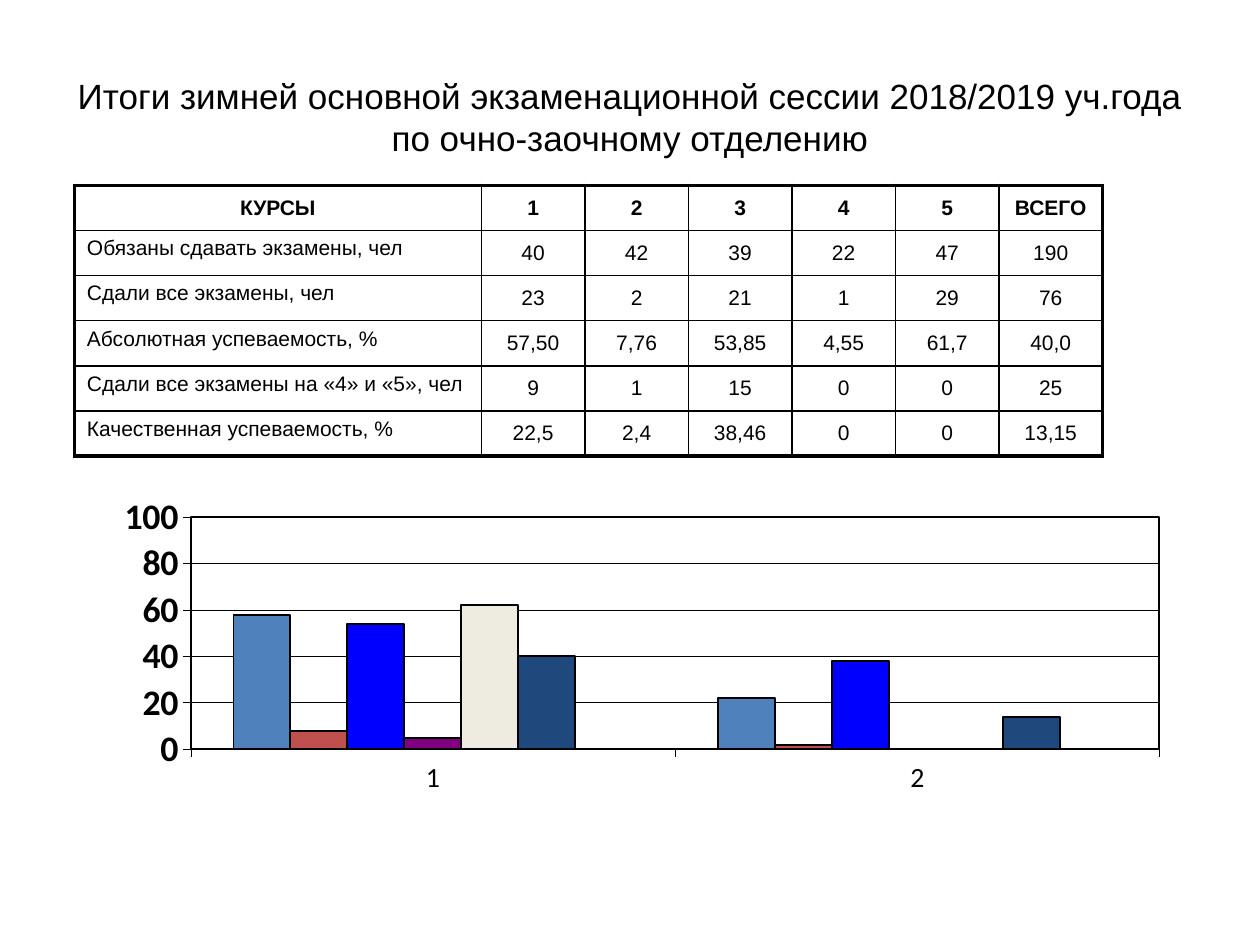
from lxml import etree
from pptx import Presentation, util as u
from pptx.chart import data as chart_data
from pptx.dml.color import RGBColor
from pptx.enum import chart as ch, text
from pptx.oxml import parse_xml
from pptx.oxml.ns import nsdecls, qn

COLORS = {"ink": "000000", "blue": "4F81BD", "red": "C0504D", "bright": "0000FF",
          "purple": "800080", "cream": "EEECE1", "navy": "1F497D"}

TITLE = ("Итоги зимней основной экзаменационной сессии 2018/2019 уч.года "
         "по очно-заочному отделению")
RESULTS = [
    ["КУРСЫ", "1", "2", "3", "4", "5", "ВСЕГО"],
    ["Обязаны сдавать экзамены, чел", "40", "42", "39", "22", "47", "190"],
    ["Сдали все экзамены, чел", "23", "2", "21", "1", "29", "76"],
    ["Абсолютная успеваемость, %", "57,50", "7,76", "53,85", "4,55", "61,7", "40,0"],
    ["Сдали все экзамены на «4» и «5», чел", "9", "1", "15", "0", "0", "25"],
    ["Качественная успеваемость, %", "22,5", "2,4", "38,46", "0", "0", "13,15"],
]
# Per course: absolute and quality success rates, then the bar colour
RATES = [((58, 22), "blue"), ((8, 2), "red"), ((54, 38), "bright"), ((5, 0), "purple"),
         ((62, 0), "cream"), ((40, 14), "navy"), ((None, None), "blue")]


def rgb(name):
    return RGBColor.from_string(COLORS[name])


def style_font(font, face, size, bold=False):
    font.name, font.size, font.bold = face, u.Pt(size), bold
    font.color.rgb = rgb("ink")


def style_line(line, width):
    line.color.rgb = rgb("ink")
    line.width = u.Pt(width)


def add_title(slide, left, top, width, height):
    frame = slide.shapes.add_textbox(left, top, width, height).text_frame
    frame.word_wrap = True
    frame.vertical_anchor = text.MSO_ANCHOR.MIDDLE
    frame.text = TITLE
    heading = frame.paragraphs[0]
    heading.alignment = text.PP_ALIGN.CENTER
    style_font(heading.runs[0].font, "Arial", 20)


def set_borders(cell, widths):
    """Draw the left, right, top and bottom borders, widths in points."""
    for side, width in zip("LRTB", widths):
        cell._tc.get_or_add_tcPr().append(parse_xml(
            f'<a:ln{side} {nsdecls("a")} w="{u.Pt(width)}"><a:solidFill>'
            f'<a:srgbClr val="{COLORS["ink"]}"/></a:solidFill></a:ln{side}>'))


def add_results(slide, left, top, width, height):
    last_row, last_col = len(RESULTS) - 1, len(RESULTS[0]) - 1
    table = slide.shapes.add_table(last_row + 1, last_col + 1, left, top, width, height).table
    table.first_row = table.horz_banding = False
    label_width = u.Inches(3.23)
    for c, column in enumerate(table.columns):
        column.width = int((width - label_width) / last_col) if c else label_width
    for r, row in enumerate(RESULTS):
        for c, value in enumerate(row):
            cell = table.cell(r, c)
            cell.text = value
            is_label = c == 0 and r > 0
            entry = cell.text_frame.paragraphs[0]
            entry.space_before = u.Pt(2.4)
            style_font(entry.runs[0].font, "Arial", 12, bold=r == 0)
            if not is_label:
                entry.alignment = text.PP_ALIGN.CENTER
                cell.vertical_anchor = text.MSO_ANCHOR.MIDDLE
            outer = (c == 0, c == last_col, r == 0, r == last_row)
            set_borders(cell, [2.25 if edge else 1 for edge in outer])
            cell.fill.background()


def frame_plot(chart, x, y, width, height):
    """Fix the inner plot area, in fractions of the chart, and outline it."""
    plot_area = chart._chartSpace.chart.plotArea
    for layout in plot_area.findall(qn("c:layout")):
        plot_area.remove(layout)
    layout = etree.Element(qn("c:layout"))
    manual = etree.SubElement(layout, qn("c:manualLayout"))
    for tag, value in (("layoutTarget", "inner"), ("xMode", "edge"), ("yMode", "edge"),
                       ("x", x), ("y", y), ("w", width), ("h", height)):
        etree.SubElement(manual, qn(f"c:{tag}")).set("val", str(value))
    plot_area.insert(0, layout)
    plot_area.append(parse_xml(
        f'<c:spPr {nsdecls("c", "a")}><a:noFill/><a:ln w="{u.Pt(1.14)}"><a:solidFill>'
        f'<a:srgbClr val="{COLORS["ink"]}"/></a:solidFill></a:ln></c:spPr>'))


def add_rates_chart(slide, left, top, width, height):
    rates = chart_data.CategoryChartData()
    rates.categories = ["1", "2"]
    for number, (values, _) in enumerate(RATES, 1):
        rates.add_series(f"Series {number}", values)
    chart = slide.shapes.add_chart(ch.XL_CHART_TYPE.COLUMN_CLUSTERED,
                                   left, top, width, height, rates).chart
    chart.has_title = chart.has_legend = False
    style_font(chart.font, "Calibri", 20.5, bold=True)

    plot = chart.plots[0]
    plot.vary_by_categories = False
    plot.gap_width, plot.overlap = 150, 0
    for series, (_, color) in zip(plot.series, RATES):
        series.invert_if_negative = False
        series.format.fill.solid()
        series.format.fill.fore_color.rgb = rgb(color)
        style_line(series.format.line, 1.14)

    for axis, size, bold in ((chart.category_axis, 15.9, False),
                             (chart.value_axis, 20.5, True)):
        style_font(axis.tick_labels.font, "Calibri", size, bold)
        style_line(axis.format.line, 0.28)
        axis.major_tick_mark = ch.XL_TICK_MARK.OUTSIDE
        axis.minor_tick_mark = ch.XL_TICK_MARK.NONE
    scale = chart.value_axis
    scale.minimum_scale, scale.maximum_scale, scale.major_unit = 0, 100, 20
    scale.has_major_gridlines = True
    style_line(scale.major_gridlines.format.line, 0.28)
    frame_plot(chart, 0.1, 0.13, 0.9, 0.64)


def main():
    deck = Presentation()
    deck.slide_width, deck.slide_height = u.Inches(10), u.Inches(7.5)
    slide = deck.slides.add_slide(deck.slide_layouts[6])
    add_title(slide, u.Inches(0.5), u.Inches(0.3), u.Inches(9), u.Inches(1.25))
    add_rates_chart(slide, u.Inches(0.66), u.Inches(3.73), u.Inches(8.55), u.Inches(2.88))
    add_results(slide, u.Inches(0.59), u.Inches(1.47), u.Inches(8.16), u.Inches(2.15))
    deck.save("out.pptx")


if __name__ == "__main__":
    main()
